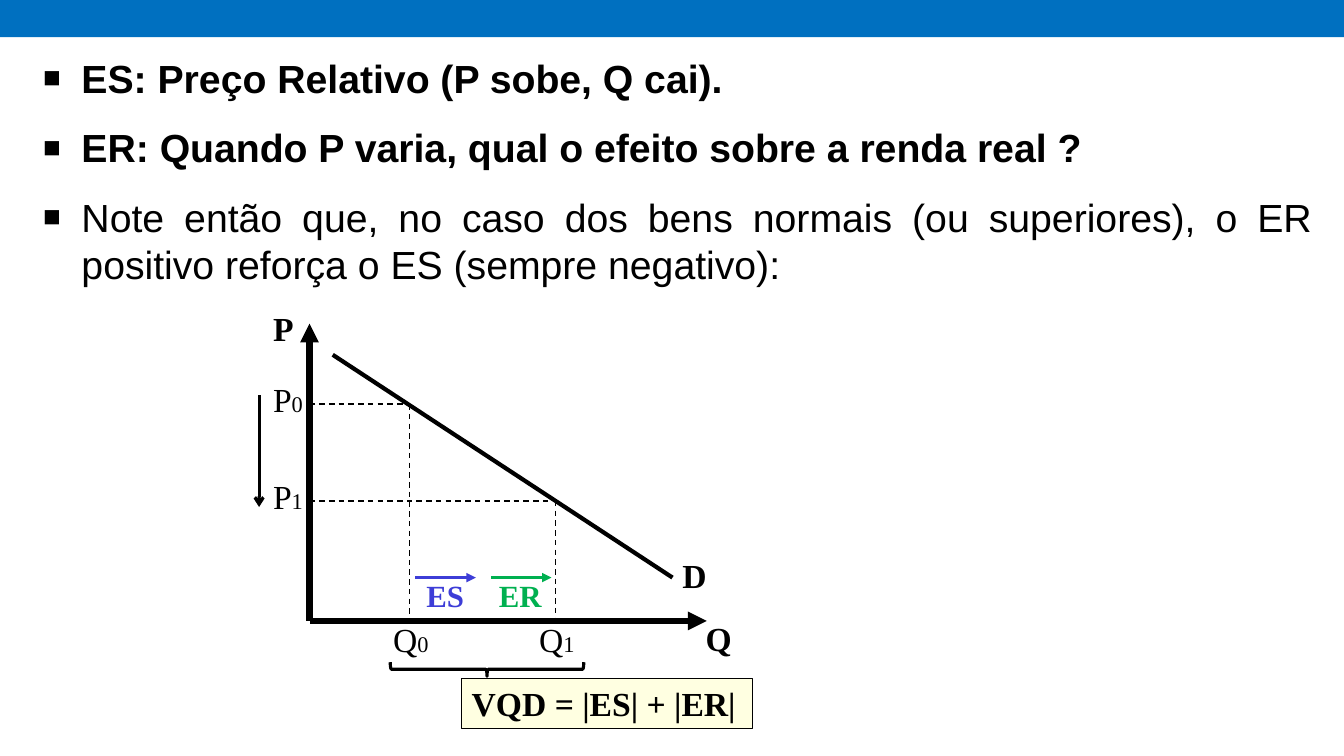
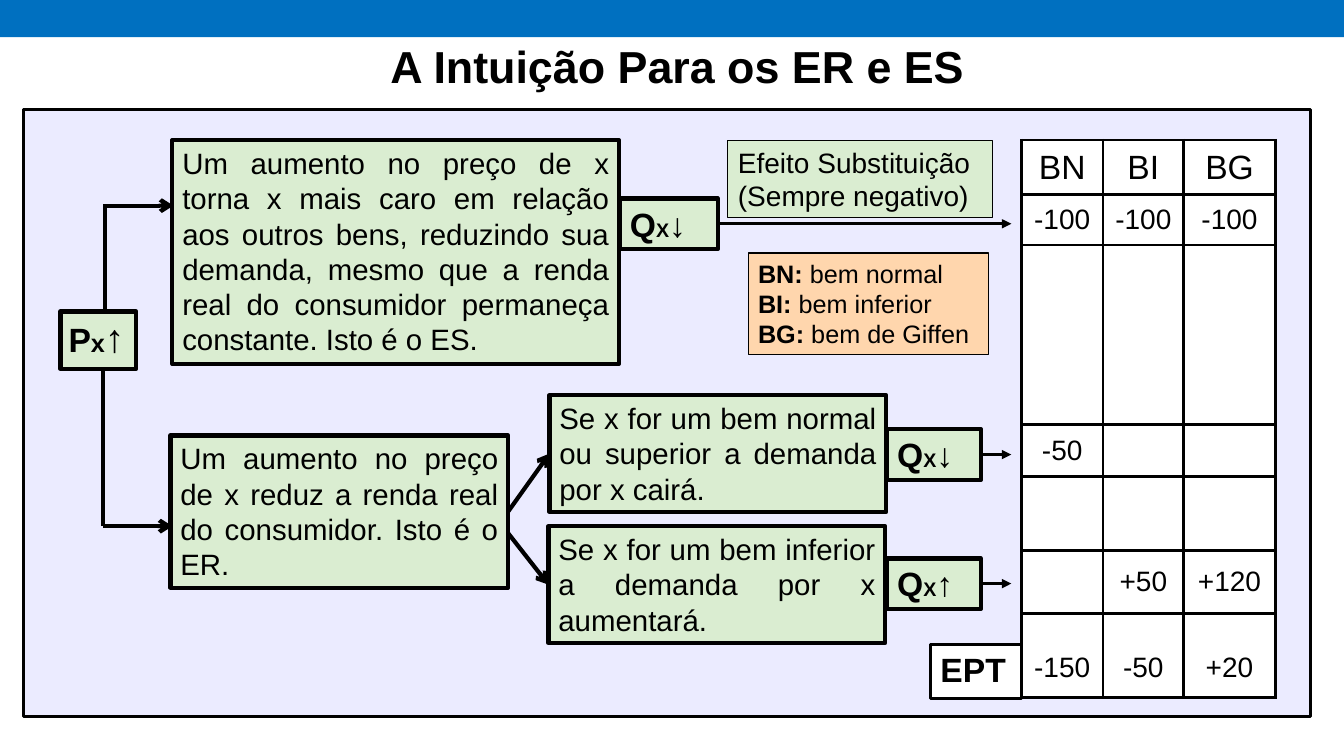
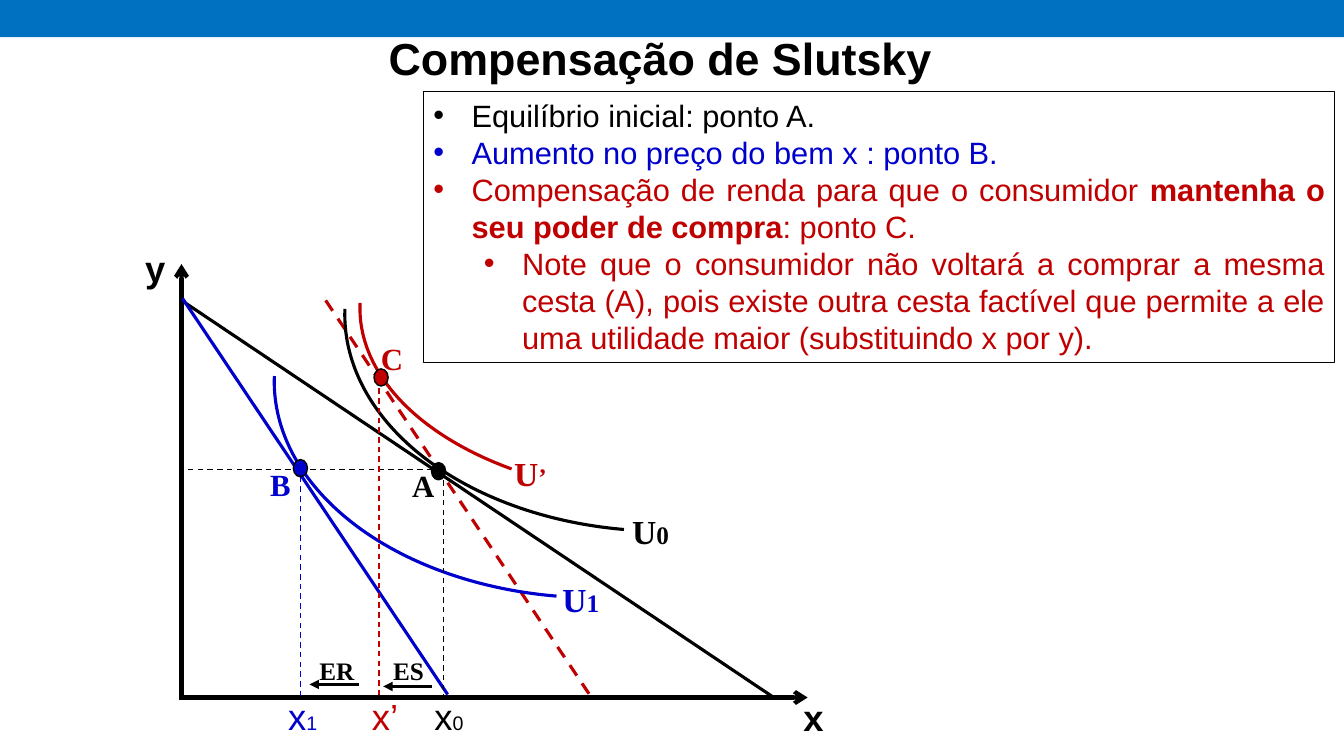
from functools import partial
from itertools import pairwise

from lxml.etree import SubElement
from pptx import Presentation
from pptx.dml.color import RGBColor
from pptx.enum.dml import MSO_LINE
from pptx.enum.shapes import MSO_CONNECTOR, MSO_SHAPE
from pptx.enum.text import MSO_ANCHOR, PP_ALIGN
from pptx.oxml.ns import qn
from pptx.util import Inches, Pt

INK = {
    "band": "0070C0", "black": "000000", "white": "FFFFFF", "violet": "3D3DD7",
    "leaf": "00B050", "cream": "FFFFE1", "panel": "EBEBFF", "mint": "DAEDD1",
    "peach": "FFD6AD", "blue": "0000CC", "red": "C00000",
}
SERIF = "Times New Roman"
ALIGN = {"left": PP_ALIGN.LEFT, "center": PP_ALIGN.CENTER, "just": PP_ALIGN.JUSTIFY}
LEFT, BOTTOM, RIGHT = 1, 2, 3
STEP = 0.38


def rgb(name):
    return RGBColor.from_string(INK[name])


def add_mark(par, sign, scale, level):
    """Give a paragraph a hanging bullet."""
    par.level = level
    props = par._p.get_or_add_pPr()
    props.set("marL", str(Inches(STEP + 0.5 * level)))
    props.set("indent", str(Inches(-STEP)))
    SubElement(props, qn("a:buSzPct"), val=str(scale * 1000))
    SubElement(props, qn("a:buFont"), typeface="Arial")
    SubElement(props, qn("a:buChar"), char=sign)


def write(frame, text, align="left", gap=0, mark=None, scale=100, levels=(), **base):
    """Fill a frame; text is a string or a list of paragraphs, each a string
    or a list of runs, each a string or a (string, format) pair."""
    for i, runs in enumerate([text] if isinstance(text, str) else text):
        par = frame.paragraphs[0] if i == 0 else frame.add_paragraph()
        par.alignment = ALIGN[align]
        if mark:
            add_mark(par, mark, scale, levels[i] if levels else 0)
        if i and gap:
            par.space_before = Pt(gap)
        for item in [runs] if isinstance(runs, str) else runs:
            words, extra = (item, {}) if isinstance(item, str) else item
            look = {"size": 24, "font": "Arial", "color": "black", "bold": False} | base | extra
            run = par.add_run()
            run.text = words
            run.font.size = Pt(look["size"])
            run.font.name = look["font"]
            run.font.bold = look["bold"]
            run.font.color.rgb = rgb(look["color"])


def set_frame(frame, anchor=MSO_ANCHOR.TOP, left=0.1, top=0.05, right=0.1):
    frame.word_wrap = True
    frame.vertical_anchor = anchor
    frame.margin_left, frame.margin_right = Inches(left), Inches(right)
    frame.margin_top = frame.margin_bottom = Inches(top)


def label(slide, text, x, y, w=0.6, h=0.5, anchor=MSO_ANCHOR.TOP, **look):
    frame = slide.shapes.add_textbox(*map(Inches, (x, y, w, h))).text_frame
    set_frame(frame, anchor)
    write(frame, text, **look)


def shape(slide, kind, x, y, w, h, fill=None, edge="black", width=2.25):
    item = slide.shapes.add_shape(kind, *map(Inches, (x, y, w, h)))
    item.shadow.inherit = False
    if fill:
        item.fill.solid()
        item.fill.fore_color.rgb = rgb(fill)
    else:
        item.fill.background()
    if edge:
        item.line.color.rgb = rgb(edge)
        item.line.width = Pt(width)
    else:
        item.line.fill.background()
    return item


def box(slide, text, x, y, w, h, fill=None, width=3, inset=None, **look):
    item = shape(slide, MSO_SHAPE.RECTANGLE, x, y, w, h, fill, width=width)
    set_frame(item.text_frame, **(inset or {}))
    write(item.text_frame, text, **look)
    return item


def line(slide, x1, y1, x2, y2, color="black", width=2.25, dash=False, tip=None,
         start=None, end=None):
    """Draw a line; start and end are (shape, side) pairs to join."""
    item = slide.shapes.add_connector(MSO_CONNECTOR.STRAIGHT, *map(Inches, (x1, y1, x2, y2)))
    item.line.color.rgb = rgb(color)
    item.line.width = Pt(width)
    if dash:
        item.line.dash_style = MSO_LINE.DASH
    if tip:
        SubElement(item.line._get_or_add_ln(), qn("a:tailEnd"), type=tip)
    SubElement(item._element.spPr, qn("a:effectLst"))
    if start:
        item.begin_connect(*start)
    if end:
        item.end_connect(*end)


def curve(slide, x, y, w, h, sweep, color):
    """Draw an indifference curve, the lower left part of an ellipse."""
    item = shape(slide, MSO_SHAPE.ARC, x, y, w, h, edge=color)
    item.adjustments[0], item.adjustments[1] = sweep, 0.59
    frame = item._element.spPr.find(qn("a:xfrm"))
    frame.set("flipH", "1")
    frame.set("flipV", "1")


def dot(slide, x, y, color):
    shape(slide, MSO_SHAPE.OVAL, x, y, 0.14, 0.17, color, width=1)


def add_edges(cell):
    props = cell._tc.get_or_add_tcPr()
    for side in "LRTB":
        edge = SubElement(props, qn("a:ln" + side), w=str(Pt(2.25)))
        fill = SubElement(edge, qn("a:solidFill"))
        SubElement(fill, qn("a:srgbClr"), val=INK["black"])


def grid(slide, rows, xs, ys):
    """Add a table whose column and row edges are at xs and ys."""
    area = (xs[0], ys[0], xs[-1] - xs[0], ys[-1] - ys[0])
    table = slide.shapes.add_table(len(rows), len(rows[0]), *map(Inches, area)).table
    table.first_row = table.horz_banding = False
    for col, (a, b) in zip(table.columns, pairwise(xs)):
        col.width = Inches(b - a)
    for row, (a, b) in zip(table.rows, pairwise(ys)):
        row.height = Inches(b - a)
    for r, row in enumerate(rows):
        for c, text in enumerate(row):
            cell = table.cell(r, c)
            add_edges(cell)
            cell.fill.solid()
            cell.fill.fore_color.rgb = rgb("white")
            cell.margin_left = cell.margin_right = cell.margin_bottom = 0
            cell.margin_top = Inches(0.24 if r == len(rows) - 1 else 0)
            cell.vertical_anchor = MSO_ANCHOR.MIDDLE
            if text:
                write(cell.text_frame, text, align="center", size=20 if r else 24)


def new_slide(deck):
    slide = deck.slides.add_slide(deck.slide_layouts[6])
    shape(slide, MSO_SHAPE.RECTANGLE, 0, -0.03, 13.33, 0.4, "band", None)
    return slide


def title(slide, text, x, y, w):
    label(slide, text, x, y, w, 0.86, MSO_ANCHOR.BOTTOM, align="center", size=32, bold=True)


def demand(deck):
    slide = new_slide(deck)
    draw = partial(line, slide)
    note = partial(label, slide, font=SERIF)
    bold = {"bold": True}
    label(slide, [
        [("ES: Preço Relativo (P sobe, Q cai).", bold)],
        [("ER: Quando P varia, qual o efeito sobre a renda real ?", bold)],
        "Note então que, no caso dos bens normais (ou superiores), o ER positivo "
        "reforça o ES (sempre negativo):",
    ], 0.33, 0.49, 12.78, 1.57, align="just", size=28, gap=16, mark="■", scale=75)

    left, base = 3.07, 6.16
    draw(left, base, left, 3.21, width=4.5, tip="triangle")
    draw(left, base, 7.01, base, width=4.5, tip="triangle")
    draw(3.3, 3.52, 6.67, 5.73, width=3)
    for name, x, y in (("P", 2.61, 3.01), ("Q", 6.9, 6.08), ("D", 6.67, 5.46)):
        note(name, x, y, bold=True)
    for num, x, y in (("0", 4.06, 4.01), ("1", 5.51, 4.97)):
        draw(left, y, x, y, width=1, dash=True)
        draw(x, y, x, base, width=1, dash=True)
        low = (num, {"size": 16})
        note([["P", low]], 2.61, y - 0.3)
        note([["Q", low]], x - 0.26, 6.09)
    for name, x, tx, color in (("ES", 4.12, 4.13, "violet"), ("ER", 4.87, 4.85, "leaf")):
        draw(x, 5.73, x + 0.6, 5.73, color, tip="triangle")
        note(name, tx, 5.67, 0.66, size=22, color=color, bold=True)
    draw(2.57, 3.92, 2.57, 5.03, tip="arrow")
    shape(slide, MSO_SHAPE.RIGHT_BRACE, 4.76, 5.68, 0.14, 1.92).rotation = 90
    box(slide, "VQD = |ES| + |ER|", 4.58, 6.73, 2.88, 0.5, "cream", 0.75, font=SERIF, bold=True)


def flow(deck):
    slide = new_slide(deck)
    draw = partial(line, slide)
    title(slide, "A Intuição Para os ER e ES", 2.41, 0.11, 8.62)
    shape(slide, MSO_SHAPE.RECTANGLE, 0.23, 1.09, 12.77, 6.02, "panel")

    box(slide, [["P", ("x", {"size": 18}), ("↑", {"size": 28, "font": SERIF})]],
        0.6, 3.09, 0.75, 0.57, "mint", inset={"left": 0.08, "top": 0.02, "right": 0}, bold=True)
    cause = partial(box, slide, fill="mint", align="just", size=21)
    cause("Um aumento no preço de x torna x mais caro em relação aos outros bens, "
          "reduzindo sua demanda, mesmo que a renda real do consumidor permaneça "
          "constante. Isto é o ES.", 1.71, 1.39, 4.43, 2.22)
    income = cause("Um aumento no preço de x reduz a renda real do consumidor. "
                   "Isto é o ER.", 1.69, 4.32, 3.35, 1.51)
    normal = cause("Se x for um bem normal ou superior a demanda por x cairá.",
                   5.45, 3.92, 3.34, 1.16)
    lower = cause("Se x for um bem inferior a demanda por x aumentará.",
                  5.44, 5.22, 3.34, 1.16)
    draw(1.04, 3.07, 1.04, 2.02, width=3)
    draw(1.04, 2.04, 1.72, 2.04, width=3, tip="arrow")
    draw(1.02, 3.66, 1.02, 5.22, width=3)
    draw(1.02, 5.22, 1.71, 5.22, width=3, tip="arrow")
    draw(5.04, 5.07, 5.45, 4.5, width=3, tip="arrow", start=(income, RIGHT), end=(normal, LEFT))
    draw(5.04, 5.29, 5.44, 5.8, width=3, tip="arrow", end=(lower, LEFT))
    for sign, x, y, w in (("↓", 6.15, 1.97, 0.97), ("↓", 8.8, 4.26, 0.93), ("↑", 8.8, 5.54, 0.93)):
        change = box(slide, [["Q", ("X", {"size": 14}), sign]], x, y, w, 0.5, "mint", bold=True)
        draw(x + w, y + 0.25, 10.03, y + 0.25, tip="triangle", start=(change, RIGHT))

    grid(slide, [
        ("BN", "BI", "BG"),
        ("-100", "-100", "-100"),
        ("", "", ""),
        ("-50", "", ""),
        ("", "", ""),
        ("", "+50", "+120"),
        ("-150", "-50", "+20"),
    ], (10.13, 10.94, 11.74, 12.65), (1.39, 1.93, 2.43, 4.21, 4.73, 5.46, 6.09, 6.92))
    box(slide, "EPT", 9.23, 6.39, 0.9, 0.54, "white", 2.25, bold=True)
    box(slide, "Efeito Substituição (Sempre negativo)", 7.22, 1.39, 2.62, 0.77, "mint", 0.75, size=20)
    kinds = (("BN:", " bem normal"), ("BI:", " bem inferior"), ("BG:", " bem de Giffen"))
    box(slide, [[(code, {"bold": True}), name] for code, name in kinds],
        7.42, 2.51, 2.38, 1.01, "peach", 0.75, size=18)


def slutsky(deck):
    slide = new_slide(deck)
    draw = partial(line, slide)
    note = partial(label, slide, font=SERIF, bold=True)
    title(slide, "Compensação de Slutsky", 2.66, 0.03, 7.78)

    draw(3.23, 2.98, 5.86, 6.91, "red", dash=True)
    for x in (1.78, 4.4):
        draw(2.98, 4.66, x, 4.66, width=1, dash=True)
    draw(1.8, 6.92, 1.8, 2.62, width=3, tip="arrow")
    draw(1.78, 6.92, 8.01, 6.92, width=3, tip="arrow")
    label(slide, "y", 1.34, 2.39, size=26, bold=True)
    label(slide, "x", 7.87, 6.85, size=26, bold=True)
    draw(1.8, 2.98, 7.69, 6.93)
    draw(1.81, 2.96, 4.44, 6.89, "blue")

    curve(slide, 3.42, 0.97, 6.32, 4.3, 168.24, "black")
    curve(slide, 2.72, 1.64, 6.38, 4.29, 168.24, "blue")
    curve(slide, 3.57, 1.19, 6.32, 3.74, 189.67, "red")
    for x, y, color in ((4.4, 4.67, "black"), (2.98, 4.73, "blue"), (3.76, 3.66, "red")):
        draw(x, y, x, 6.92, color, 1, True)
    for name, x, y, dx, dy, color in (
        ("A", 3.99, 4.58, 4.28, 4.59, "black"),
        ("B", 2.58, 4.57, 2.91, 4.56, "blue"),
        ("C", 3.68, 3.32, 3.71, 3.66, "red"),
    ):
        dot(slide, dx, dy, color)
        note(name, x, y, 0.42, size=22, color=color)
    for sign, x, y, color in (
        ("0", 6.17, 5.02, "black"), ("1", 5.48, 5.69, "blue"), ("’", 5, 4.44, "red"),
    ):
        note([["U", (sign, {"size": 18})]], x, y, 0.79, color=color)
    for sign, size, x, color in (
        ("0", 14, 4.21, "black"), ("1", 14, 2.76, "blue"), ("’", 26, 3.59, "red"),
    ):
        label(slide, [["x", (sign, {"size": size})]], x, 6.84, size=26, color=color)
    for name, x, start, y in (("ES", 3.8, 4.28, 6.81), ("ER", 3.07, 3.56, 6.79)):
        draw(start, y, x, y, tip="triangle")
        note(name, x, 6.45, size=18)

    red = {"color": "red"}
    box(slide, [
        "Equilíbrio inicial: ponto A.",
        [("Aumento no preço do bem x : ponto B.", {"color": "blue"})],
        [("Compensação de renda para que o consumidor ", red),
         ("mantenha o seu poder de compra", red | {"bold": True}),
         (": ponto C.", red)],
        [("Note que o consumidor não voltará a comprar a mesma cesta (A), pois existe "
          "outra cesta factível que permite a ele uma utilidade maior "
          "(substituindo x por y).", red)],
    ], 4.2, 0.91, 9.04, 2.69, width=0.75, align="just", size=22, mark="•", levels=(0, 0, 0, 1))


def main():
    deck = Presentation()
    deck.slide_width, deck.slide_height = Inches(13.33), Inches(7.5)
    for build in (demand, flow, slutsky):
        build(deck)
    deck.save("out.pptx")


if __name__ == "__main__":
    main()
